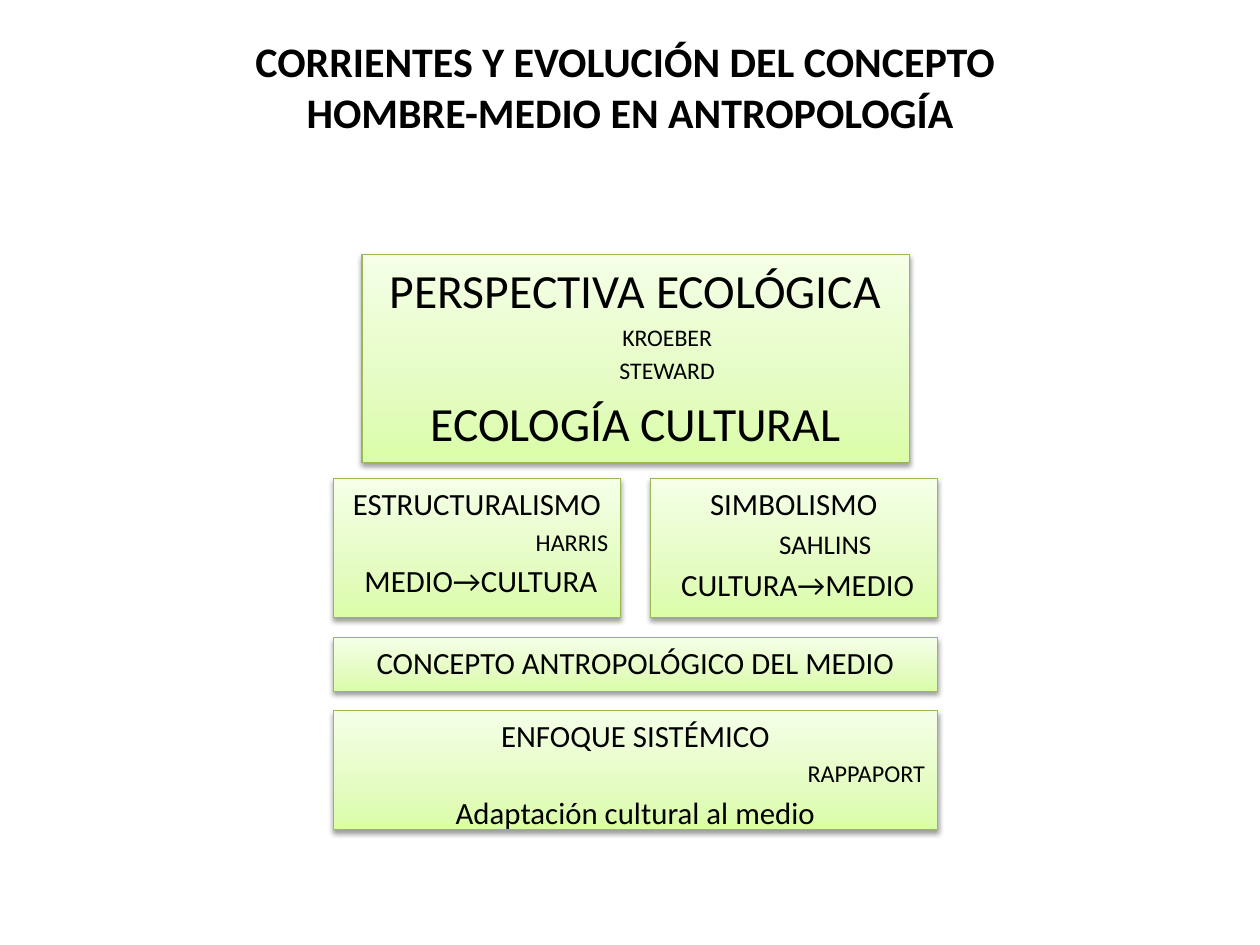
import copy

import lxml.etree
import pptx
import pptx.dml.color
import pptx.enum.shapes
import pptx.enum.text
import pptx.oxml.ns
import pptx.util

Pt = pptx.util.Pt
RGB = pptx.dml.color.RGBColor.from_string
qn = pptx.oxml.ns.qn
ALIGN = pptx.enum.text.PP_ALIGN
ANCHOR = pptx.enum.text.MSO_ANCHOR

THEME = {
    "font": "Calibri",
    "text": "000000",
    "line": "98B955",
    "shadow": "000000",
    "gradient": [(0, "DAFDA7"), (0.35, "E4FCC2"), (1, "F5FFE7")],
    "title": 24,
    "large": 27.2,
    "heading": 17.6,
    "author": 13.8,
    "author_small": 13.6,
    "author_large": 15.4,
}


def style_text(paragraph, size, bold=False):
    for run in paragraph.runs:
        run.font.name = THEME["font"]
        run.font.size = Pt(size)
        run.font.bold = bold
        run.font.color.rgb = RGB(THEME["text"])


def style_box(shape):
    """Green gradient, thin outline and soft shadow below."""
    shape.fill.gradient()
    shape.fill.gradient_angle = 90
    properties = shape._element.spPr
    stop_list = properties.find(".//" + qn("a:gsLst"))
    stop_list.insert(1, copy.deepcopy(stop_list[0]))
    for stop, (position, color) in zip(shape.fill.gradient_stops, THEME["gradient"]):
        stop.position = position
        stop.color.rgb = RGB(color)
    shape.line.color.rgb = RGB(THEME["line"])
    shape.line.width = Pt(0.75)

    shape.shadow.inherit = False
    effects = properties.find(qn("a:effectLst"))
    shadow = lxml.etree.SubElement(
        effects, qn("a:outerShdw"), blurRad=str(Pt(3.1)), dist=str(Pt(1.6)),
        dir="5400000", rotWithShape="0")
    color = lxml.etree.SubElement(shadow, qn("a:srgbClr"), val=THEME["shadow"])
    lxml.etree.SubElement(color, qn("a:alpha"), val="38000")


presentation = pptx.Presentation()
presentation.slide_width, presentation.slide_height = Pt(720), Pt(540)
slide = presentation.slides.add_slide(presentation.slide_layouts[1])

# Title
title = slide.shapes.title
title.left, title.top, title.width, title.height = Pt(36), Pt(21.6), Pt(648), Pt(55.4)
title.text_frame.text = "CORRIENTES Y EVOLUCIÓN DEL CONCEPTO \vHOMBRE-MEDIO EN ANTROPOLOGÍA"
title.text_frame.auto_size = pptx.enum.text.MSO_AUTO_SIZE.NONE
title.text_frame.vertical_anchor = ANCHOR.MIDDLE
title.text_frame.paragraphs[0].alignment = ALIGN.CENTER
style_text(title.text_frame.paragraphs[0], THEME["title"], bold=True)

# Boxes: left, top, width, height, then (text, size, alignment, indent) per line
LEFT, WIDTH, ROW_TOP, ROW_HEIGHT = 190.6, 345, 273.6, 79.4
COLUMN = 164
CENTER, RIGHT = ALIGN.CENTER, ALIGN.RIGHT
boxes = [
    (206.8, 145.4, 312.8, 119, [
        ("PERSPECTIVA ECOLÓGICA", "large", CENTER, 0),
        ("KROEBER", "author_small", CENTER, 36),
        ("STEWARD", "author_small", CENTER, 36),
        ("ECOLOGÍA CULTURAL", "large", CENTER, 0)]),
    (LEFT, ROW_TOP, COLUMN, ROW_HEIGHT, [
        ("ESTRUCTURALISMO", "heading", CENTER, 0),
        ("HARRIS", "author", RIGHT, 0),
        ("MEDIO→CULTURA", "heading", CENTER, 4.5)]),
    (LEFT + WIDTH - COLUMN, ROW_TOP, COLUMN, ROW_HEIGHT, [
        ("SIMBOLISMO", "heading", CENTER, 0),
        ("SAHLINS", "author_large", CENTER, 36),
        ("CULTURA→MEDIO", "heading", CENTER, 4.5)]),
    (LEFT, 364.4, WIDTH, 30.6, [
        ("CONCEPTO ANTROPOLÓGICO DEL MEDIO", "heading", CENTER, 0)]),
    (LEFT, 406, WIDTH, 68, [
        ("ENFOQUE SISTÉMICO", "heading", CENTER, 0),
        ("RAPPAPORT", "author", RIGHT, 0),
        ("Adaptación cultural al medio", "heading", CENTER, 0)]),
]

for index, (left, top, width, height, lines) in enumerate(boxes):
    # The first box is the body placeholder
    if index == 0:
        shape = slide.placeholders[1]
        shape.left, shape.top, shape.width, shape.height = Pt(left), Pt(top), Pt(width), Pt(height)
    else:
        shape = slide.shapes.add_shape(
            pptx.enum.shapes.MSO_SHAPE.RECTANGLE, Pt(left), Pt(top), Pt(width), Pt(height))
    style_box(shape)

    frame = shape.text_frame
    frame.text = "\n".join(line[0] for line in lines)
    frame.word_wrap = True
    frame.auto_size = pptx.enum.text.MSO_AUTO_SIZE.NONE
    frame.vertical_anchor = ANCHOR.TOP
    for paragraph, (_, size_name, alignment, indent) in zip(frame.paragraphs, lines):
        size = THEME[size_name]
        paragraph.alignment = alignment
        paragraph.level = 1 if indent == 36 else 0
        paragraph.space_before = Pt(round(0.2 * size, 1))
        paragraph_properties = paragraph._p.get_or_add_pPr()
        paragraph_properties.set("marL", str(Pt(indent)))
        paragraph_properties.set("indent", "0")
        lxml.etree.SubElement(paragraph_properties, qn("a:buNone"))
        style_text(paragraph, size)

presentation.save("out.pptx")
